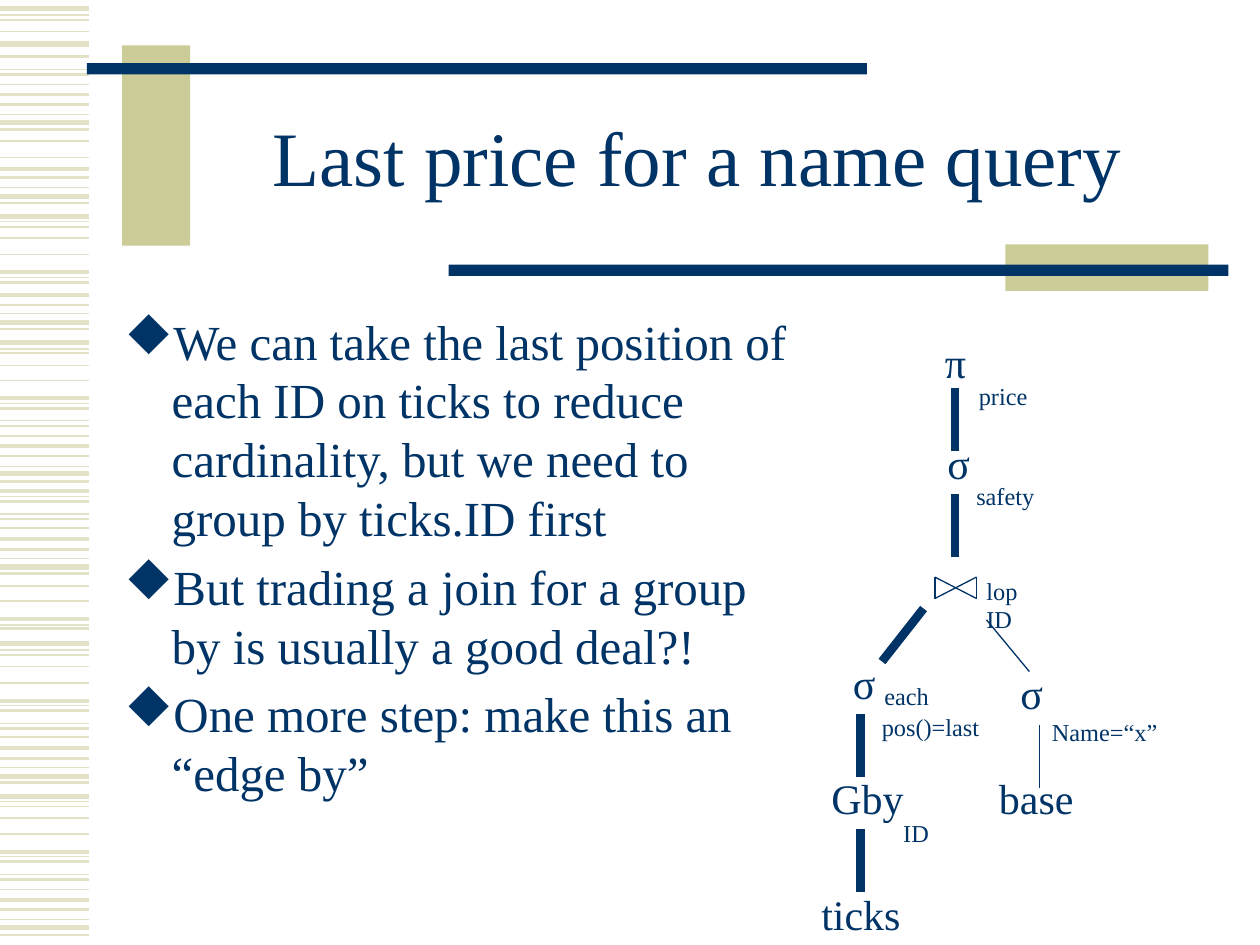
from lxml.etree import SubElement
from pptx import Presentation
from pptx.dml.color import RGBColor
from pptx.enum.shapes import MSO_CONNECTOR as Connector, MSO_SHAPE as Shape
from pptx.enum.text import MSO_ANCHOR as Anchor, PP_ALIGN as Align
from pptx.oxml.ns import qn
from pptx.util import Cm, Pt

NAVY = RGBColor(0x00, 0x33, 0x66)
KHAKI = RGBColor(0xCC, 0xCC, 0x99)
PALE_KHAKI = RGBColor(0xE3, 0xE2, 0xC7)
FONT = "Times New Roman"
THIN, THICK = 0.75, 5

# All positions below are in inches
TITLE = "Last price for a name query"
BULLETS = [
    "We can take the last position of each ID on ticks to reduce cardinality, "
    "but we need to group by ticks.ID first",
    "But trading a join for a group by is usually a good deal?!",
    "One more step: make this an “edge by”",
]

# Side stripes: line width in points -> heights on the slide
STRIPE_WIDTH = 0.71
STRIPES = {
    0.75: [0.12, 0.55, 0.91, 1.49, 1.76, 2.2, 2.49, 2.77, 3.2, 3.34, 3.7, 3.94, 4.08,
           4.43, 4.96, 5.16, 5.6, 5.74, 6.09, 6.36, 6.8, 6.94, 7.3],
    1: [0.16, 0.25, 0.67, 1.12, 1.25, 1.8, 1.89, 2.02, 2.8, 2.9, 3.02, 3.46, 4.19,
        4.65, 4.77, 5.2, 5.29, 5.42, 5.85, 6.4, 6.49, 6.62, 7.06],
    1.5: [0.45, 0.59, 0.83, 1.03, 1.41, 1.61, 2.24, 2.42, 2.61, 3.24, 3.38, 3.62, 3.82,
          3.98, 4.12, 4.36, 4.55, 4.99, 5.64, 5.78, 6.02, 6.21, 6.84, 6.98, 7.22, 7.42],
    2.25: [0.75, 1.34, 2.16, 2.34, 3.16, 3.54, 3.9, 4.28, 4.91, 5.56, 5.94, 6.76, 7.14],
    3: [0.07, 0.35, 0.97, 1.56, 1.72, 2.56, 2.72, 3.76, 4.5, 5.11, 6.16, 6.32, 7.36],
}

# Decorative bars: left, top, width, height, colour
BARS = [
    (0.97, 0.36, 0.54, 1.59, KHAKI),
    (0.69, 0.5, 6.19, 0.09, NAVY),
    (7.98, 1.94, 1.61, 0.37, KHAKI),
    (3.56, 2.1, 6.19, 0.09, NAVY),
]

# Query plan: text, left, top, width
OPERATORS = [
    ("π", 7.4, 2.62, 0.38),
    ("σ", 7.42, 3.42, 0.4),
    ("σ", 6.67, 5.17, 0.4),
    ("σ", 8, 5.25, 0.4),
    ("Gby", 6.5, 6.08, 0.78),
    ("base", 7.83, 6.08, 0.79),
    ("ticks", 6.42, 7, 0.83),
]
SUBSCRIPTS = [
    ("price", 7.67, 2.75, 0.65),
    ("safety", 7.65, 3.55, 0.73),
    ("lop", 7.73, 4.3, 0.49),
    ("ID", 7.73, 4.52, 0.44),
    ("each", 6.92, 5.13, 0.61),
    ("pos()=last", 6.9, 5.38, 1.1),
    ("Name=“x”", 8.25, 5.42, 1.17),
    ("ID", 7.07, 6.22, 0.44),
]

# Plan edges: start x, start y, end x, end y, line width
EDGES = [
    (7.58, 3.58, 7.58, 3.08, THICK),
    (7.58, 4.42, 7.58, 3.92, THICK),
    (7, 5.25, 7.33, 4.83, THICK),
    (8.17, 5.33, 7.83, 4.92, THIN),
    (6.83, 6.17, 6.83, 5.67, THICK),
    (8.25, 6.25, 8.25, 5.75, THIN),
    (6.83, 7.08, 6.83, 6.58, THICK),
]
JOIN_LEFT, JOIN_TOP, JOIN_RIGHT, JOIN_BOTTOM = 7.42, 4.58, 7.75, 4.75


def inches(*values):
    return [Cm(2.54 * value) for value in values]


def add_line(x1, y1, x2, y2, width, color=NAVY):
    line = slide.shapes.add_connector(Connector.STRAIGHT, *inches(x1, y1, x2, y2))
    line.line.color.rgb = color
    line.line.width = Pt(width)
    SubElement(line._element.spPr, qn("a:effectLst"))


def add_text_frame(left, top, width, height, wrap):
    frame = slide.shapes.add_textbox(*inches(left, top, width, height)).text_frame
    frame.word_wrap = wrap
    return frame


def add_run(paragraph, text, size):
    run = paragraph.add_run()
    run.text = text
    run.font.name = FONT
    run.font.size = Pt(size)
    run.font.color.rgb = NAVY
    return run


def add_label(text, left, top, width, height):
    frame = add_text_frame(left, top, width, height, False)
    return add_run(frame.paragraphs[0], text, 24)


def set_bullet(paragraph):
    properties = paragraph._p.get_or_add_pPr()
    indent = Cm(0.95)
    properties.set("marL", str(indent))
    properties.set("indent", str(-indent))
    color = SubElement(properties, qn("a:buClr"))
    SubElement(color, qn("a:srgbClr"), val=str(NAVY))
    # The letter u is a solid diamond in this symbol font
    SubElement(properties, qn("a:buFont"), typeface="Wingdings", charset="2")
    SubElement(properties, qn("a:buChar"), char="u")


presentation = Presentation()
presentation.slide_width, presentation.slide_height = inches(10, 7.5)
slide = presentation.slides.add_slide(presentation.slide_layouts[6])

# Stripes and bars
for width, heights in STRIPES.items():
    for y in heights:
        add_line(0, y, STRIPE_WIDTH, y, width, PALE_KHAKI)
for *box, color in BARS:
    bar = slide.shapes.add_shape(Shape.RECTANGLE, *inches(*box))
    bar.shadow.inherit = False
    bar.fill.solid()
    bar.fill.fore_color.rgb = color
    bar.line.fill.background()

# Title
frame = add_text_frame(1.5, 0.67, 8.07, 1.25, True)
frame.vertical_anchor = Anchor.MIDDLE
paragraph = frame.paragraphs[0]
paragraph.alignment = Align.CENTER
paragraph.line_spacing = 0.85
add_run(paragraph, TITLE, 44)

# Bullets
frame = add_text_frame(0.89, 2.42, 5.55, 4.24, True)
for index, text in enumerate(BULLETS):
    paragraph = frame.add_paragraph() if index else frame.paragraphs[0]
    paragraph.space_before = Pt(5.6)
    set_bullet(paragraph)
    add_run(paragraph, text, 28)

# Query plan
for edge in EDGES:
    add_line(*edge)
for y1, y2 in ((JOIN_BOTTOM, JOIN_TOP), (JOIN_TOP, JOIN_BOTTOM)):
    add_line(JOIN_LEFT, y1, JOIN_RIGHT, y2, THIN)
for x in (JOIN_LEFT, JOIN_RIGHT):
    add_line(x, JOIN_TOP, x, JOIN_BOTTOM, THIN)
for operator in OPERATORS:
    add_label(*operator, 0.5)
for subscript in SUBSCRIPTS:
    run = add_label(*subscript, 0.37)
    run._r.get_or_add_rPr().set("baseline", "-25000")

presentation.save("out.pptx")
